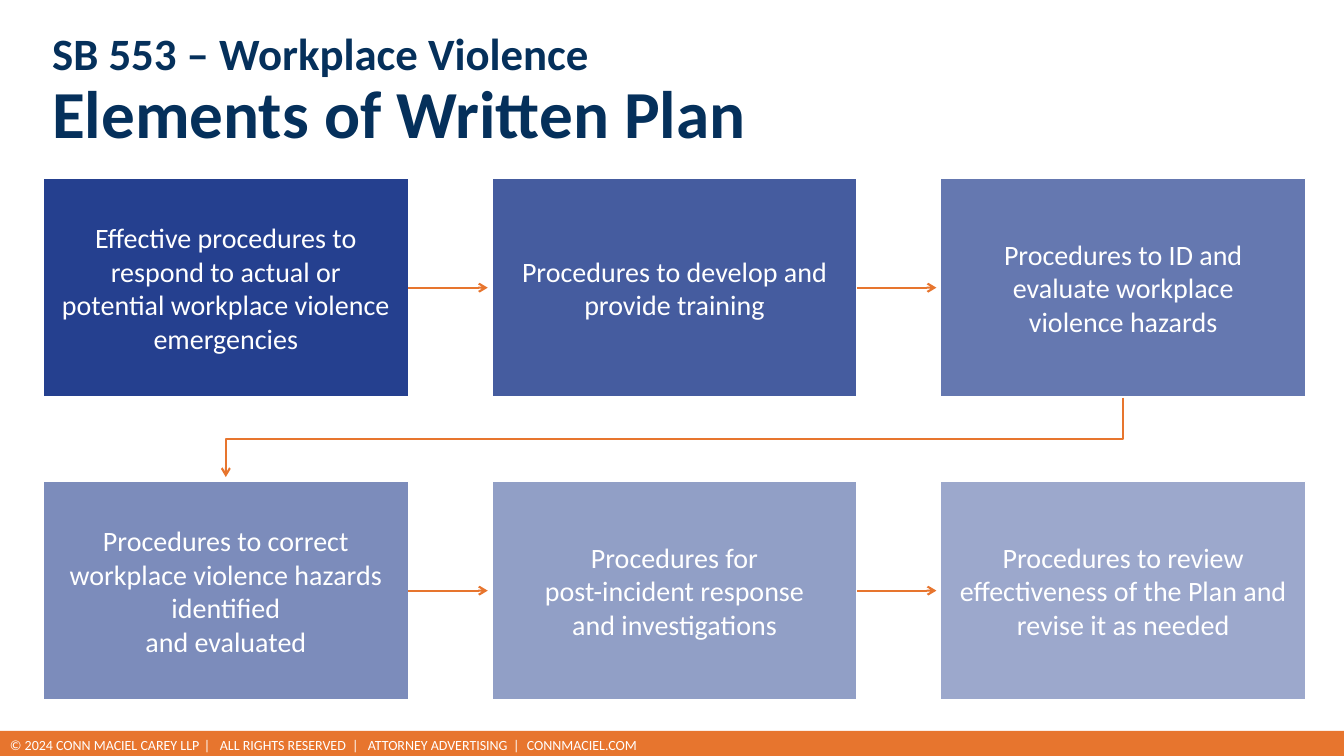
from lxml.etree import SubElement
from pptx import Presentation
from pptx.dml.color import RGBColor
from pptx.enum.shapes import MSO_CONNECTOR, MSO_SHAPE
from pptx.enum.text import MSO_ANCHOR, PP_ALIGN
from pptx.oxml.ns import qn
from pptx.util import Pt

COLORS = {"navy": "05305B", "blue": "25408F", "orange": "E7752E", "white": "FFFFFF"}
LEFT, TOP, WIDTH, HEIGHT = 31, 127.4, 260.6, 156.2
STEP_X, STEP_Y = 320.5, 216.4
ARROW = 56.8

STEPS = [
    ("Effective procedures to respond to actual or potential workplace violence emergencies", 100),
    ("Procedures to develop and provide training", 85),
    ("Procedures to ID and evaluate workplace\nviolence hazards", 70),
    ("Procedures to correct workplace violence hazards identified\vand evaluated", 60),
    ("Procedures for\npost-incident response\vand investigations", 50),
    ("Procedures to review effectiveness of the Plan and revise it as needed", 45),
]


def style_font(font, size, color, bold=False):
    for name, value in {"name": "Calibri", "size": Pt(size), "bold": bold}.items():
        setattr(font, name, value)
    font.color.rgb = RGBColor.from_string(COLORS[color])


def style_arrow(shape):
    shape.line.color.rgb = RGBColor.from_string(COLORS["orange"])
    shape.line.width = Pt(1.5)
    SubElement(shape.line._get_or_add_ln(), qn("a:tailEnd"), type="arrow")


deck = Presentation()
deck.slide_width, deck.slide_height = Pt(960), Pt(540)
page = deck.slides.add_slide(deck.slide_layouts[6])

footer = page.shapes.add_shape(MSO_SHAPE.RECTANGLE, 0, Pt(522), Pt(960), Pt(18))
footer.shadow.inherit = False
footer.fill.solid()
footer.fill.fore_color.rgb = RGBColor.from_string(COLORS["orange"])
footer.line.fill.background()
frame = footer.text_frame
footer_format = {"margin_left": Pt(7.2), "margin_top": Pt(1.5), "margin_bottom": 0,
                 "vertical_anchor": MSO_ANCHOR.MIDDLE, "word_wrap": True}
for name, value in footer_format.items():
    setattr(frame, name, value)
para = frame.paragraphs[0]
para.alignment = PP_ALIGN.LEFT
para.line_spacing = Pt(12)
tabs = SubElement(para._p.get_or_add_pPr(), qn("a:tabLst"))
for stop in (138.5, 150, 244.5, 255.7, 359.5, 369.3):
    SubElement(tabs, qn("a:tab"), pos=str(Pt(stop)), algn="l")
span = para.add_run()
span.text = "\t|\t".join(["© 2024 CONN MACIEL CAREY LLP", "ALL RIGHTS RESERVED",
                          "ATTORNEY ADVERTISING", "CONNMACIEL.COM"])
style_font(span.font, 10, "white")

title = page.shapes.add_textbox(Pt(30.2), Pt(31.7), Pt(864), Pt(69))
title.text_frame.word_wrap = True
title.text_frame.vertical_anchor = MSO_ANCHOR.MIDDLE
para = title.text_frame.paragraphs[0]
para.line_spacing = 0.9
for text, size in (("SB 553 – Workplace Violence", 32), ("Elements of Written Plan", 48)):
    if para.runs:
        para.add_line_break()
    span = para.add_run()
    span.text = text
    style_font(span.font, size, "navy", True)

for index, (text, opacity) in enumerate(STEPS):
    row, column = divmod(index, 3)
    left, top = LEFT + column * STEP_X, TOP + row * STEP_Y
    box = page.shapes.add_shape(MSO_SHAPE.RECTANGLE, Pt(left), Pt(top), Pt(WIDTH), Pt(HEIGHT))
    box.shadow.inherit = False
    box.fill.solid()
    box.fill.fore_color.rgb = RGBColor.from_string(COLORS["blue"])
    if opacity < 100:
        fill_color = box._element.spPr.find(qn("a:solidFill")).find(qn("a:srgbClr"))
        SubElement(fill_color, qn("a:alpha"), val=str(opacity * 1000))
    box.line.color.rgb = RGBColor.from_string(COLORS["white"])
    box.line.width = Pt(1)
    frame = box.text_frame
    frame.text = text
    box_format = {"word_wrap": True, "vertical_anchor": MSO_ANCHOR.MIDDLE}
    box_format.update({f"margin_{side}": Pt(11.5) for side in ("left", "top", "right", "bottom")})
    for name, value in box_format.items():
        setattr(frame, name, value)
    for para in frame.paragraphs:
        para.alignment = PP_ALIGN.CENTER
        for span in para.runs:
            style_font(span.font, 20, "white")
    if column < 2:
        right, middle = left + WIDTH, top + HEIGHT / 2
        arrow = page.shapes.add_connector(MSO_CONNECTOR.STRAIGHT, Pt(right), Pt(middle),
                                          Pt(right + ARROW), Pt(middle))
        arrow.begin_connect(box, 3)
        style_arrow(arrow)
        SubElement(arrow._element.spPr, qn("a:effectLst"))

start_x, end_x = LEFT + 2 * STEP_X + WIDTH / 2, LEFT + WIDTH / 2
start_y, end_y = TOP + HEIGHT + 0.5, TOP + STEP_Y - 3
bend_y = TOP + (HEIGHT + STEP_Y) / 2
outline = page.shapes.build_freeform(Pt(start_x), Pt(start_y))
outline.add_line_segments([(Pt(start_x), Pt(bend_y)), (Pt(end_x), Pt(bend_y)),
                           (Pt(end_x), Pt(end_y))], close=False)
return_arrow = outline.convert_to_shape()
return_arrow.shadow.inherit = False
return_arrow.fill.background()
style_arrow(return_arrow)

deck.save("out.pptx")
